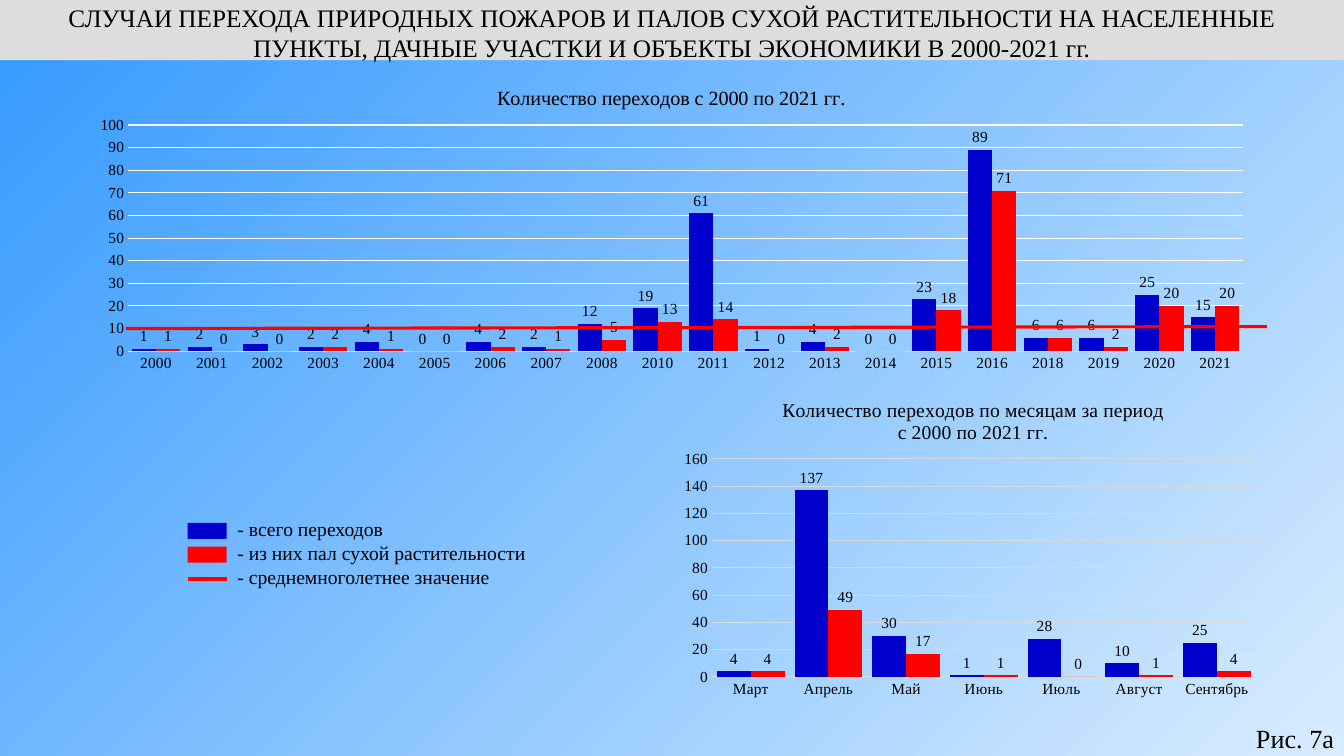
from lxml import etree
from pptx import Presentation
from pptx.chart.data import CategoryChartData
from pptx.dml.color import RGBColor
from pptx.enum.chart import XL_CHART_TYPE, XL_LABEL_POSITION, XL_TICK_MARK
from pptx.enum.shapes import MSO_CONNECTOR, MSO_SHAPE
from pptx.enum.text import MSO_ANCHOR, PP_ALIGN
from pptx.oxml.ns import qn
from pptx.util import Pt

COLUMNS = XL_CHART_TYPE.COLUMN_CLUSTERED
OUTSIDE = XL_LABEL_POSITION.OUTSIDE_END
NO_TICK = XL_TICK_MARK.NONE
STRAIGHT = MSO_CONNECTOR.STRAIGHT
RECT = MSO_SHAPE.RECTANGLE
TOP = MSO_ANCHOR.TOP
LEFT, CENTER = PP_ALIGN.LEFT, PP_ALIGN.CENTER

FONT = "Times New Roman"
BLACK, WHITE, GRAY, SILVER = "000000", "FFFFFF", "D9D9D9", "DDDDDD"
BLUE, RED = "0000CC", "FF0000"
SKY, PALE = "3399FF", "D9ECFF"


def rgb(value):
    return RGBColor.from_string(value)


def style_font(font, size, color=BLACK):
    font.name = FONT
    font.size = Pt(size)
    font.bold = False
    font.color.rgb = rgb(color)


def write(tf, text, size=14, color=BLACK, align=LEFT):
    for i, line in enumerate(text.split("\n")):
        p = tf.add_paragraph() if i else tf.paragraphs[0]
        p.alignment = align
        r = p.add_run()
        r.text = line
        style_font(r.font, size, color)


def place(parent, index, **fractions):
    for old in parent.findall(qn("c:layout")):
        parent.remove(old)
    layout = etree.Element(qn("c:layout"))
    manual = etree.SubElement(layout, qn("c:manualLayout"))
    if "w" in fractions:
        etree.SubElement(manual, qn("c:layoutTarget")).set("val", "inner")
    for mode in ("xMode", "yMode"):
        etree.SubElement(manual, qn(f"c:{mode}")).set("val", "edge")
    for name, value in fractions.items():
        etree.SubElement(manual, qn(f"c:{name}")).set("val", str(value))
    parent.insert(index, layout)


class SlideBuilder:
    def __init__(self, slide):
        self.slide = slide
        self.shapes = slide.shapes

    def background(self, start, end):
        fill = self.slide.background.fill
        fill.gradient()
        fill.gradient_angle = 315
        for stop, color, position in zip(fill.gradient_stops, (start, end), (0, 1)):
            stop.color.rgb = rgb(color)
            stop.position = position

    def rect(self, x, y, w, h, color):
        sp = self.shapes.add_shape(RECT, Pt(x), Pt(y), Pt(w), Pt(h))
        sp.shadow.inherit = False
        sp.fill.solid()
        sp.fill.fore_color.rgb = rgb(color)
        sp.line.fill.background()
        return sp

    def line(self, x1, y1, x2, y2, color, width):
        cn = self.shapes.add_connector(STRAIGHT, Pt(x1), Pt(y1), Pt(x2), Pt(y2))
        cn.line.color.rgb = rgb(color)
        cn.line.width = Pt(width)
        etree.SubElement(cn._element.spPr, qn("a:effectLst"))

    def text(self, x, y, w, h, text, inset=(7.2, 3.6), **fmt):
        tf = self.shapes.add_textbox(Pt(x), Pt(y), Pt(w), Pt(h)).text_frame
        tf.word_wrap = False
        tf.margin_left = tf.margin_right = Pt(inset[0])
        tf.margin_top = tf.margin_bottom = Pt(inset[1])
        write(tf, text, **fmt)

    def chart(self, box, title, title_size, title_at, plot_at, cats, series, top, step, grid):
        data = CategoryChartData()
        data.categories = cats
        for name, values, _ in series:
            data.add_series(name, values)
        chart = self.shapes.add_chart(COLUMNS, *map(Pt, box), data).chart
        style_font(chart.font, title_size)
        chart.has_legend = False
        chart.has_title = True
        write(chart.chart_title.text_frame, title, size=title_size, align=CENTER)
        chart.chart_title.include_in_layout = False
        root = chart._chartSpace
        place(root.xpath("c:chart/c:title")[0], 1, **title_at)
        place(root.xpath("c:chart/c:plotArea")[0], 0, **plot_at)

        plot = chart.plots[0]
        plot.gap_width = 30
        plot.overlap = 0
        plot.vary_by_categories = False
        for ser, (_, _, color) in zip(plot.series, series):
            ser.format.fill.solid()
            ser.format.fill.fore_color.rgb = rgb(color)
            ser.invert_if_negative = False
            labels = ser.data_labels
            labels.show_value = True
            labels.position = OUTSIDE
            style_font(labels.font, 11)

        for axis in (chart.category_axis, chart.value_axis):
            axis.major_tick_mark = axis.minor_tick_mark = NO_TICK
            style_font(axis.tick_labels.font, 11)
        chart.category_axis.format.line.color.rgb = rgb(GRAY)
        chart.category_axis.format.line.width = Pt(0.75)
        axis = chart.value_axis
        axis.minimum_scale, axis.maximum_scale, axis.major_unit = 0, top, step
        axis.format.line.fill.background()
        axis.has_major_gridlines = True
        axis.major_gridlines.format.line.color.rgb = rgb(grid)
        axis.major_gridlines.format.line.width = Pt(0.75)

    def legend(self, x, y, step, entries, average):
        self.shapes = self.slide.shapes.add_group_shape().shapes
        for i, (label, color) in enumerate(entries):
            self.rect(x, y + i * step, 28, 11.5, color)
        line_y = y + len(entries) * step + 6
        self.line(x, line_y, x + 28, line_y, RED, 3)
        labels = [label for label, _ in entries] + [average]
        for i, (label, w) in enumerate(zip(labels, (120, 222, 197))):
            self.text(x + 28.5, y - 7.5 + i * step, w, 24.5, label)
        self.shapes = self.slide.shapes


def main():
    prs = Presentation()
    prs.slide_width, prs.slide_height = Pt(960), Pt(540)
    s = SlideBuilder(prs.slides.add_slide(prs.slide_layouts[6]))
    s.background(SKY, PALE)

    header = s.rect(0, -2, 960, 45, SILVER)
    tf = header.text_frame
    tf.word_wrap = True
    tf.vertical_anchor = TOP
    write(
        tf,
        "СЛУЧАИ ПЕРЕХОДА ПРИРОДНЫХ ПОЖАРОВ И ПАЛОВ СУХОЙ РАСТИТЕЛЬНОСТИ "
        "НА НАСЕЛЕННЫЕ ПУНКТЫ, ДАЧНЫЕ УЧАСТКИ И ОБЪЕКТЫ ЭКОНОМИКИ В 2000-2021 гг.",
        size=18,
        align=CENTER,
    )

    s.legend(
        134, 373.5, 17,
        [("- всего переходов", BLUE), ("- из них пал сухой растительности", RED)],
        "- среднемноголетнее значение",
    )

    years = [str(y) for y in range(2000, 2022) if y not in (2009, 2017)]
    s.chart(
        (55, 47.5, 850, 222.5),
        "Количество переходов с 2000 по 2021 гг.", 14.4,
        dict(x=0.35, y=0.05), dict(x=0.043, y=0.188, w=0.937, h=0.726),
        years,
        [
            ("Всего переходов",
             (1, 2, 3, 2, 4, 0, 4, 2, 12, 19, 61, 1, 4, 0, 23, 89, 6, 6, 25, 15), BLUE),
            ("Пал сухой растительности",
             (1, 0, 0, 2, 1, 0, 2, 1, 5, 13, 14, 0, 2, 0, 18, 71, 6, 2, 20, 20), RED),
        ],
        100, 10, WHITE,
    )
    s.line(90, 234.7, 905, 233.3, RED, 2.25)

    s.chart(
        (480, 270, 425.5, 233.3),
        "Количество переходов по месяцам за период\nс 2000 по 2021 гг.", 14,
        dict(x=0.18, y=0.05), dict(x=0.067, y=0.248, w=0.913, h=0.667),
        ["Март", "Апрель", "Май", "Июнь", "Июль", "Август", "Сентябрь"],
        [
            ("Всего переходов", (4, 137, 30, 1, 28, 10, 25), BLUE),
            ("Пал сухой растительности", (4, 49, 17, 1, 0, 1, 4), RED),
        ],
        160, 20, GRAY,
    )

    s.text(888.5, 512, 73.5, 31, "Рис. 7а", inset=(8.64, 4.32), size=18.7)
    prs.save("out.pptx")


if __name__ == "__main__":
    main()
